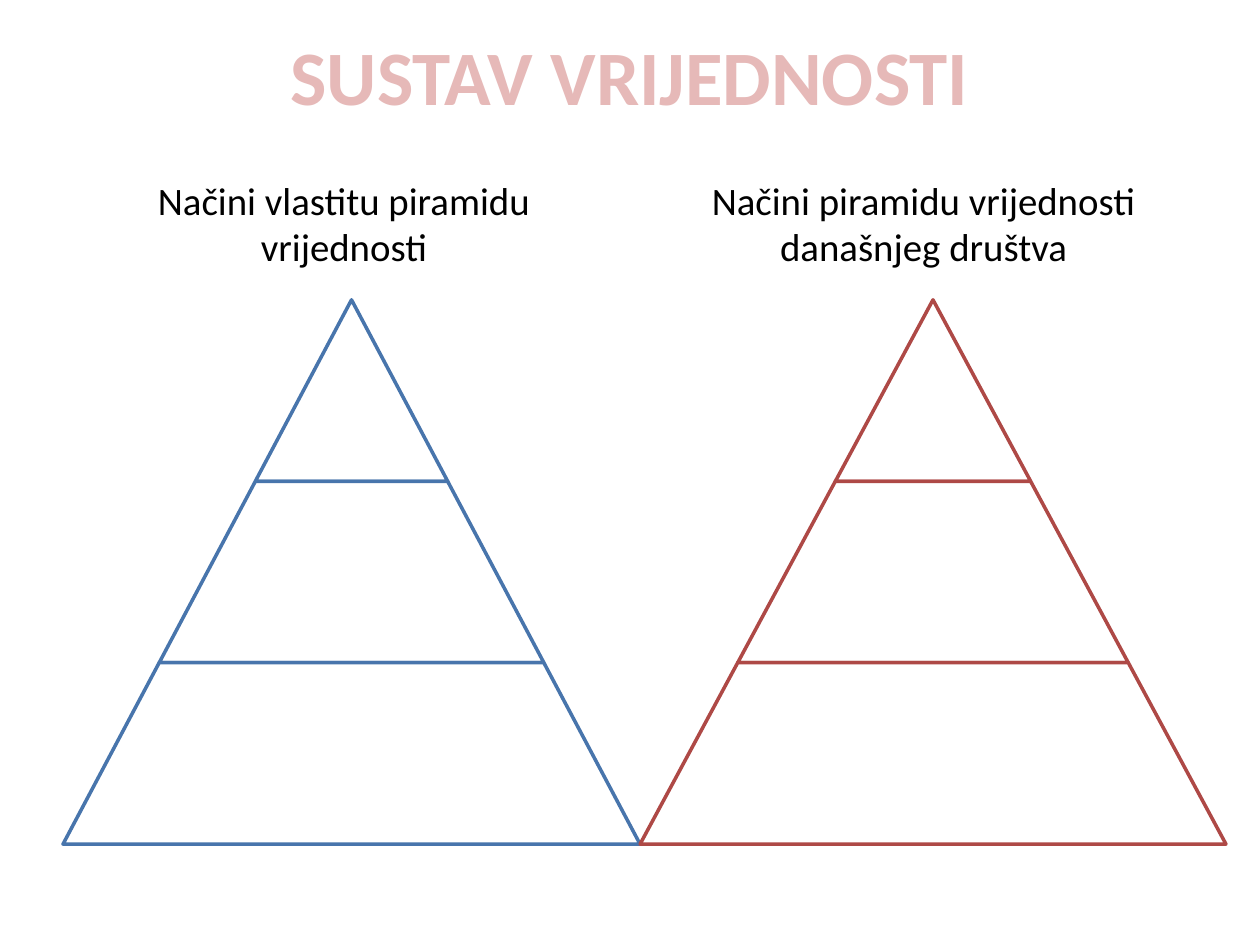
from lxml.etree import SubElement
from pptx import Presentation
from pptx.dml.color import RGBColor
from pptx.enum.shapes import MSO_SHAPE as Shape
from pptx.enum.text import MSO_ANCHOR as Anchor, PP_ALIGN as Align
from pptx.oxml.ns import qn
from pptx.util import Inches, Pt

COLORS = {
    "white": "FFFFFF", "black": "000000",
    "title": "E6B9B8", "title_outline": "C0504D",
    "blue": "4875AC", "red": "AE4946",
}
FONT = "Calibri"
WIDTH, HEIGHT = 10, 7.5
TIERS = 3
PYRAMID_TOP, TIER_HEIGHT = 2.38, 1.44
CAPTION_TOP, CAPTION_WIDTH, CAPTION_HEIGHT = 1.86, 4.42, 0.7
# Per column: caption, caption left, pyramid left, base width, colour
COLUMNS = [
    ("Načini vlastitu piramidu vrijednosti", 0.52, 0.5, 4.58, "blue"),
    ("Načini piramidu vrijednosti današnjeg društva", 5.12, 5.08, 4.65, "red"),
]


def color(name):
    return RGBColor.from_string(COLORS[name])


def add_outlined(shapes, kind, box, line_color, line_width):
    shape = shapes.add_shape(kind, *map(Inches, box))
    shape.shadow.inherit = False
    shape.fill.solid()
    shape.fill.fore_color.rgb = color("white")
    shape.line.color.rgb = color(line_color)
    shape.line.width = Pt(line_width)
    return shape


def write(shape, text, size, text_color, bold=False, anchor=Anchor.MIDDLE):
    frame = shape.text_frame
    frame.word_wrap = True
    frame.vertical_anchor = anchor
    frame.text = text
    paragraph = frame.paragraphs[0]
    paragraph.alignment = Align.CENTER
    font = paragraph.runs[0].font
    font.name, font.size, font.bold = FONT, Pt(size), bold
    font.color.rgb = color(text_color)
    return paragraph


def outline_text(run, name, width):
    properties = run.font._element
    line = SubElement(properties, qn("a:ln"), w=str(Pt(width)))
    fill = SubElement(line, qn("a:solidFill"))
    SubElement(fill, qn("a:srgbClr"), val=COLORS[name])
    properties.insert(0, line)  # the outline precedes the fill


def add_title(slide, text):
    box = (0, -0.03, WIDTH, HEIGHT / 6)
    shape = add_outlined(slide.shapes, Shape.RECTANGLE, box, "white", 0.75)
    paragraph = write(shape, text, 44, "title", bold=True)
    outline_text(paragraph.runs[0], "title_outline", 1.75)


def add_caption(slide, text, left):
    box = (left, CAPTION_TOP, CAPTION_WIDTH, CAPTION_HEIGHT)
    caption = slide.shapes.add_textbox(*map(Inches, box))
    write(caption, text, 22.2, "black", anchor=Anchor.BOTTOM)
    caption.text_frame.margin_bottom = Inches(0.42)


def add_pyramid(slide, left, base, line_color):
    shapes = slide.shapes.add_group_shape().shapes
    inset = base / TIERS / 2  # each side narrows by this much per tier
    for tier in range(TIERS):
        box = (left + (TIERS - 1 - tier) * inset, PYRAMID_TOP + tier * TIER_HEIGHT,
               2 * inset * (tier + 1), TIER_HEIGHT)
        trapezoid = add_outlined(shapes, Shape.TRAPEZOID, box, line_color, 2)
        trapezoid.adjustments[0] = inset / TIER_HEIGHT


def main():
    presentation = Presentation()
    presentation.slide_width = Inches(WIDTH)
    presentation.slide_height = Inches(HEIGHT)
    slide = presentation.slides.add_slide(presentation.slide_layouts[6])

    # Heading
    add_title(slide, "SUSTAV VRIJEDNOSTI")

    # Two captioned pyramids side by side
    for caption, caption_left, left, base, line_color in COLUMNS:
        add_caption(slide, caption, caption_left)
        add_pyramid(slide, left, base, line_color)

    presentation.save("out.pptx")


if __name__ == "__main__":
    main()
